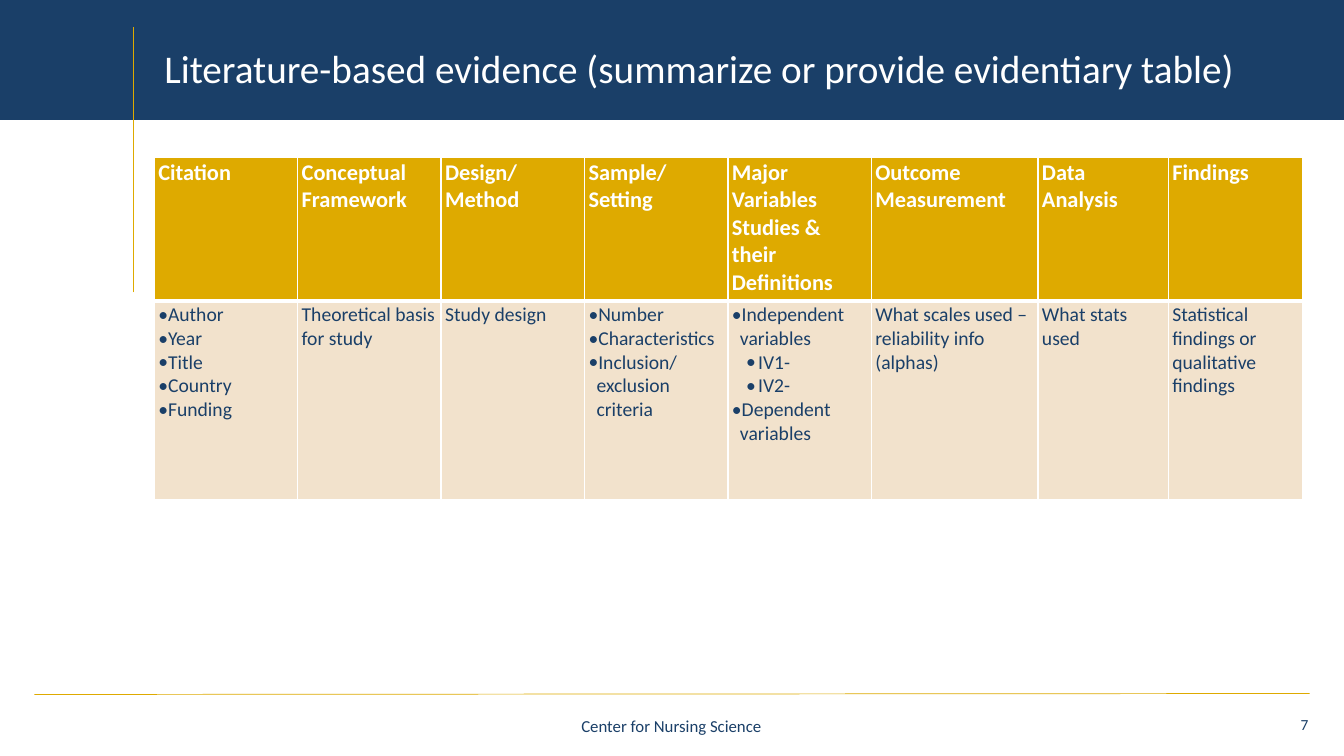
from dataclasses import dataclass
from typing import NamedTuple

from lxml.etree import SubElement
from pptx import Presentation
from pptx.dml.color import RGBColor
from pptx.enum.shapes import MSO_CONNECTOR, MSO_SHAPE
from pptx.enum.text import MSO_ANCHOR, MSO_AUTO_SIZE, PP_ALIGN
from pptx.oxml.ns import qn
from pptx.slide import Slide
from pptx.table import _Cell
from pptx.text.text import TextFrame, _Paragraph
from pptx.util import Inches, Pt


@dataclass(frozen=True)
class Theme:
    font: str = "Calibri"
    navy: str = "1A3F68"
    gold: str = "DEAA00"
    sand: str = "F2E2CC"
    white: str = "FFFFFF"
    title: int = 28
    head: int = 16
    body: int = 14
    foot: int = 12
    number: int = 11


class Item(NamedTuple):
    text: str
    level: int = 0  # 0 plain, 1 bullet, 2 nested bullet


class Column(NamedTuple):
    share: float
    head: str
    items: list[Item]


class Rule(NamedTuple):
    start: tuple[float, float]
    end: tuple[float, float]


class Note(NamedTuple):
    box: tuple[float, float, float, float]
    text: str
    size: int
    align: PP_ALIGN


THEME = Theme()
INDENTS = {1: (0.08, -0.08), 2: (0.26, -0.12)}

COLUMNS = [
    Column(1.42, "Citation", [
        Item(word, 1)
        for word in ("Author", "Year", "Title", "Country", "Funding")]),
    Column(1.42, "Conceptual Framework", [Item("Theoretical basis for study")]),
    Column(1.42, "Design/ Method", [Item("Study design")]),
    Column(1.42, "Sample/ Setting", [
        Item("Number", 1), Item("Characteristics", 1),
        Item("Inclusion/ exclusion criteria", 1)]),
    Column(1.42, "Major Variables Studies & their Definitions", [
        Item("Independent variables", 1), Item("IV1-", 2),
        Item("IV2-", 2), Item("Dependent variables", 1)]),
    Column(1.65, "Outcome Measurement",
           [Item("What scales used – reliability info (alphas)")]),
    Column(1.29, "Data Analysis", [Item("What stats used")]),
    Column(1.33, "Findings",
           [Item("Statistical findings or qualitative findings")]),
]
ROWS = (1.42, 1.97)
GRID = (1.53, 1.56, 11.39, 3.4)

RULES = [
    Rule((12.99, 6.88), (0.34, 6.89)),
    Rule((1.32, 2.9), (1.32, 0.27)),
]
NOTES = [
    Note((9.58, 6.98, 3.53, 0.35), "7 ", THEME.number, PP_ALIGN.RIGHT),
    Note((3.68, 7.02, 5.96, 0.33), "Center for Nursing Science", THEME.foot,
         PP_ALIGN.CENTER),
]


def color(code: str) -> RGBColor:
    return RGBColor.from_string(code)


def add_run(par: _Paragraph, text: str, size: int, code: str,
            bold: bool = False) -> None:
    run = par.add_run()
    run.text = text
    run.font.name = THEME.font
    run.font.size = Pt(size)
    run.font.bold = bold
    run.font.color.rgb = color(code)


def set_line(frame: TextFrame, text: str, size: int, code: str,
             align: PP_ALIGN) -> None:
    """Fill a frame with one line of text, set on its bottom edge."""
    frame.word_wrap = True
    frame.auto_size = MSO_AUTO_SIZE.NONE
    frame.vertical_anchor = MSO_ANCHOR.BOTTOM
    par = frame.paragraphs[0]
    par.alignment = align
    par.line_spacing = 0.9
    add_run(par, text, size, code)


def add_band(slide: Slide) -> None:
    band = slide.shapes.add_shape(
        MSO_SHAPE.RECTANGLE, 0, 0, Inches(13.34), Inches(1.19))
    band.shadow.inherit = False
    band.fill.solid()
    band.fill.fore_color.rgb = color(THEME.navy)
    band.line.fill.background()


def add_rule(slide: Slide, rule: Rule) -> None:
    line = slide.shapes.add_connector(
        MSO_CONNECTOR.STRAIGHT, *map(Inches, rule.start + rule.end))
    line.line.color.rgb = color(THEME.gold)
    line.line.width = Pt(0.5)
    SubElement(line._element.spPr, qn("a:effectLst"))


def add_note(slide: Slide, note: Note) -> None:
    box = slide.shapes.add_textbox(*map(Inches, note.box))
    set_line(box.text_frame, note.text, note.size, THEME.navy, note.align)


def add_title(slide: Slide) -> None:
    title = slide.shapes.title
    title.left, title.top = Inches(1.53), Inches(0.47)
    title.width, title.height = Inches(11.61), Inches(0.49)
    set_line(title.text_frame,
             "Literature-based evidence (summarize or provide evidentiary table)",
             THEME.title, THEME.white, PP_ALIGN.LEFT)
    # Bring the title in front of the band
    slide.shapes._spTree.append(title._element)


def add_bullet(par: _Paragraph, level: int) -> None:
    left, hang = INDENTS[level]
    par.level = level - 1
    props = par._p.get_or_add_pPr()
    props.set("marL", str(Inches(left)))
    props.set("indent", str(Inches(hang)))
    SubElement(props, qn("a:buFont")).set("typeface", THEME.font)
    SubElement(props, qn("a:buChar")).set("char", "•")


def set_cell(cell: _Cell, items: list[Item], top: bool) -> None:
    """Format one cell; top marks the header row."""
    cell.margin_left = cell.margin_right = Inches(0.04)
    cell.margin_top = cell.margin_bottom = Inches(0.02)
    cell.vertical_anchor = MSO_ANCHOR.TOP
    widths = {"L": 1, "R": 1, "T": 1 if top else 3, "B": 3 if top else 1}
    for side, width in widths.items():
        edge = SubElement(cell._tc.get_or_add_tcPr(), qn(f"a:ln{side}"))
        edge.set("w", str(Pt(width)))
        fill = SubElement(edge, qn("a:solidFill"))
        SubElement(fill, qn("a:srgbClr")).set("val", THEME.white)
    cell.fill.solid()
    cell.fill.fore_color.rgb = color(THEME.gold if top else THEME.sand)
    frame = cell.text_frame
    for i, item in enumerate(items):
        par = frame.add_paragraph() if i else frame.paragraphs[0]
        if item.level:
            add_bullet(par, item.level)
        add_run(par, item.text, THEME.head if top else THEME.body,
                THEME.white if top else THEME.navy, top)


def add_grid(slide: Slide) -> None:
    """Add the table, its columns and rows sharing out the full size."""
    grid = slide.shapes.add_table(
        len(ROWS), len(COLUMNS), *map(Inches, GRID)).table
    grid.horz_banding = False
    wide = GRID[2] / sum(col.share for col in COLUMNS)
    high = GRID[3] / sum(ROWS)
    for row, share in zip(grid.rows, ROWS):
        row.height = Inches(share * high)
    for i, col in enumerate(COLUMNS):
        grid.columns[i].width = Inches(col.share * wide)
        set_cell(grid.cell(0, i), [Item(col.head)], True)
        set_cell(grid.cell(1, i), col.items, False)


def main() -> None:
    deck = Presentation()
    deck.slide_width, deck.slide_height = Inches(13.33), Inches(7.5)
    slide = deck.slides.add_slide(deck.slide_layouts.get_by_name("Title Only"))
    for note in NOTES:
        add_note(slide, note)
    add_band(slide)
    for rule in RULES:
        add_rule(slide, rule)
    add_title(slide)
    add_grid(slide)
    deck.save("out.pptx")


if __name__ == "__main__":
    main()
